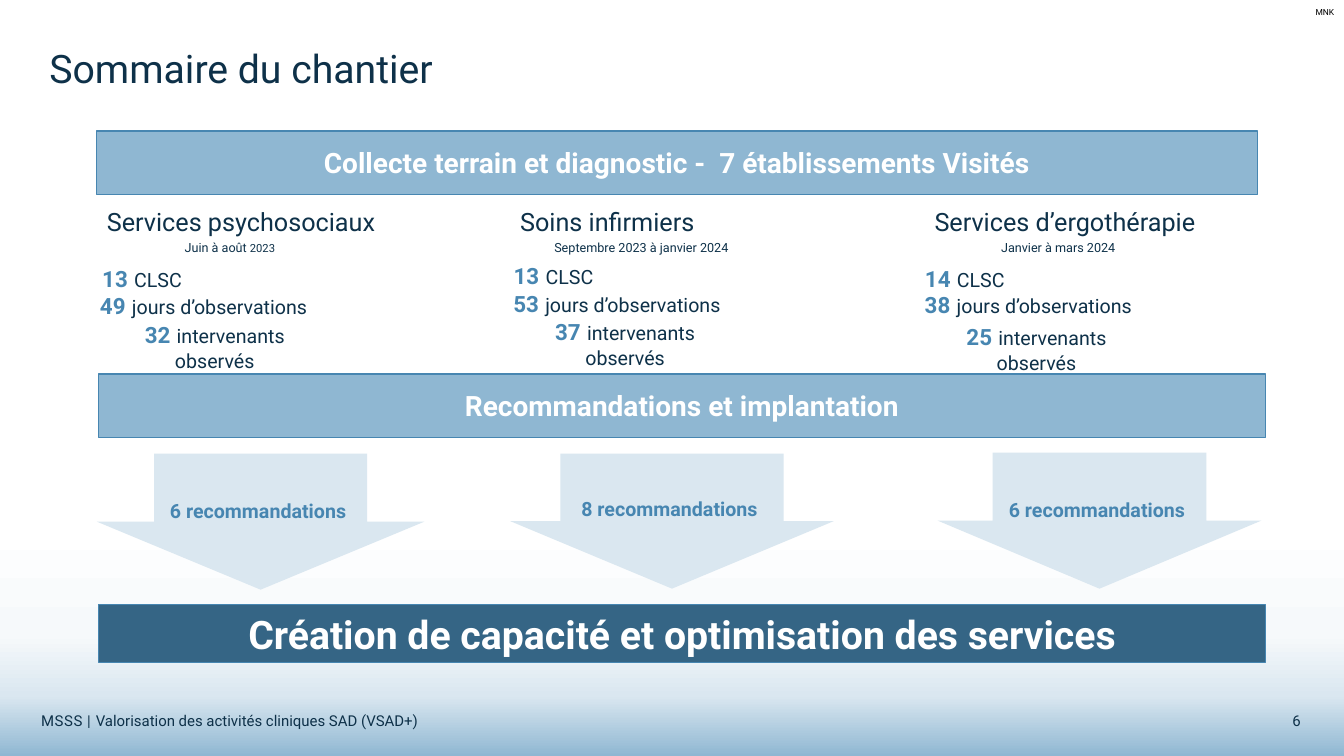
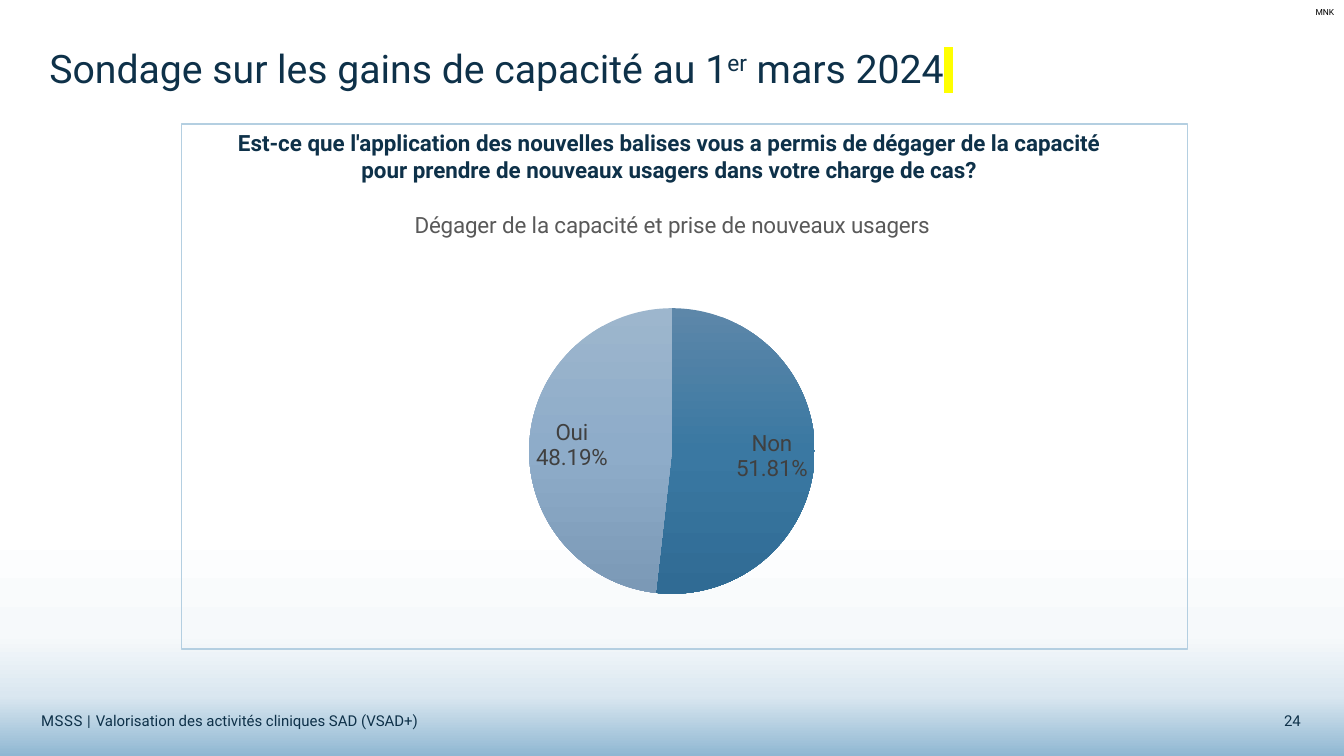
from lxml import etree
from pptx import Presentation
from pptx import util as u
from pptx.chart import data as chart_data
from pptx.dml import color
from pptx.enum import chart as chart_types, shapes, text
from pptx.oxml import ns

FONT = "Roboto"
NAVY, BLUE, DEEP, SKY, PALE = "0E3149", "4786B1", "356585", "8FB7D2", "DAE7F0"
WHITE, BLACK, GREY, FRAME, YELLOW = "FFFFFF", "000000", "404040", "B4CFE1", "FFFF00"
BACKGROUND = [(69, WHITE), (84, "F6F9FB"), (92, PALE), (100, SKY)]
LEFT, CENTER, RIGHT = text.PP_ALIGN.LEFT, text.PP_ALIGN.CENTER, text.PP_ALIGN.RIGHT
TOP, MIDDLE = text.MSO_ANCHOR.TOP, text.MSO_ANCHOR.MIDDLE

SERVICES = [
    {"heading": ("Services psychosociaux", (0.96, 1.96, 3.35, 0.47)),
     "period": ([("Juin à août ", {"size": 9}), ("2023", {"size": 8})], (1.37, 2.34, 1.82, 0.24)),
     "counts": [("13", 0.91, 2.55), ("49", 0.89, 2.82), ("32", 0.92, 3.11)],
     "arrow": ("6 recommandations ", (0.96, 4.5, 3.25, 1.35), 0.65)},
    {"heading": ("Soins infirmiers", (5.06, 1.98, 3.35, 0.44)),
     "period": ([("Septembre 2023 à janvier 2024", {"size": 9})], (5.25, 2.34, 2.22, 0.24)),
     "counts": [("13", 4.99, 2.52), ("53", 4.99, 2.8), ("37", 4.99, 3.08)],
     "arrow": ("8 recommandations ", (5.06, 4.5, 3.21, 1.34), 0.69)},
    {"heading": ("Services d’ergothérapie", (9.17, 1.98, 3.35, 0.44)),
     "period": ([("Janvier à mars 2024", {"size": 9})], (9.66, 2.34, 1.67, 0.24)),
     "counts": [("14", 9.07, 2.55), ("38", 9.07, 2.81), ("25", 9.07, 3.13)],
     "arrow": ("6 recommandations ", (9.3, 4.49, 3.21, 1.35), 0.66)},
]
COUNT_LABELS = [("CLSC", 1, 0), ("jours d’observations", 2.26, 0), ("intervenants observés", 2.42, 0.3)]
ANSWERS = [
    ("Non", 0.5181, [(0, "5D87A9"), (50, "3A78A2"), (100, "306B94")]),
    ("Oui", 0.4819, [(0, "9DB6CD"), (50, "8EACC9"), (100, "7B99B6")]),
]


def rgb(value):
    """Turn a hex string into a colour."""
    return color.RGBColor.from_string(value)


def inches(box):
    """Turn a sequence of numbers into lengths."""
    return [u.Inches(value) for value in box]


def set_all(target, values):
    """Set each named attribute on the target."""
    for name, value in values.items():
        setattr(target, name, value)


def format_font(font, size, fill=NAVY, bold=False):
    """Apply the deck typeface with a size, colour and weight."""
    set_all(font, {"name": FONT, "size": u.Pt(size), "bold": bold})
    font.color.rgb = rgb(fill)


def gradient(owner, stops):
    """Fill the owner with a vertical gradient through the stops."""
    owner.fill.gradient()
    element = owner.element.xpath(".//a:gradFill")[0]
    stop_list = element.find(ns.qn("a:gsLst"))
    for stop in list(stop_list):
        stop_list.remove(stop)
    for position, value in stops:
        stop = etree.SubElement(stop_list, ns.qn("a:gs"), pos=str(position * 1000))
        etree.SubElement(stop, ns.qn("a:srgbClr"), val=value)
    element.find(ns.qn("a:lin")).set("ang", "5400000")


def add_run(paragraph, words, style, attributes=None, highlight=None):
    """Append a formatted run, with optional raw attributes and highlight."""
    run = paragraph.add_run()
    run.text = words
    format_font(run.font, **style)
    properties = run.font._element
    for name, value in (attributes or {}).items():
        properties.set(name, value)
    if highlight:
        mark = etree.Element(ns.qn("a:highlight"))
        etree.SubElement(mark, ns.qn("a:srgbClr"), val=highlight)
        properties.find(ns.qn("a:latin")).addprevious(mark)


def write(shape, paragraphs, align=LEFT, anchor=MIDDLE, wrap=True, spacing=1.0, **margins):
    """Write paragraphs of runs into a shape."""
    frame = shape.text_frame
    set_all(frame, {"word_wrap": wrap, "auto_size": text.MSO_AUTO_SIZE.NONE, "vertical_anchor": anchor})
    set_all(frame, {name: u.Inches(value) for name, value in margins.items()})
    for index, runs in enumerate(paragraphs):
        paragraph = frame.add_paragraph() if index else frame.paragraphs[0]
        set_all(paragraph, {"alignment": align, "line_spacing": spacing, "space_before": u.Pt(0)})
        for run in runs:
            add_run(paragraph, *run)


def add_text(slide, box, paragraphs, **layout):
    """Add a text box."""
    write(slide.shapes.add_textbox(*inches(box)), paragraphs, **layout)


def fill_placeholder(shape, box, runs, **layout):
    """Move a placeholder and write one unbulleted paragraph in it."""
    set_all(shape, dict(zip(("left", "top", "width", "height"), inches(box))))
    properties = shape.text_frame.paragraphs[0]._p.get_or_add_pPr()
    set_all(properties, {"marL": 0, "indent": 0})
    etree.SubElement(properties, ns.qn("a:buNone"))
    write(shape, [runs], **layout)


def add_block(slide, kind, box, fill=None, line=None, width=1):
    """Add a flat preset shape with an optional fill and outline."""
    shape = slide.shapes.add_shape(kind, *inches(box))
    shape.shadow.inherit = False
    if fill:
        shape.fill.solid()
        shape.fill.fore_color.rgb = rgb(fill)
    else:
        shape.fill.background()
    if line:
        shape.line.color.rgb = rgb(line)
        shape.line.width = u.Pt(width)
    else:
        shape.line.fill.background()
    return shape


def add_band(slide, words, box, size=20, fill=SKY, width=1):
    """Add a full-width band with a bold white caption."""
    band = add_block(slide, shapes.MSO_SHAPE.RECTANGLE, box, fill, BLUE, width)
    write(band, [[(words, {"size": size, "fill": WHITE, "bold": True})]], align=CENTER)


def add_arrow(slide, words, box, shaft):
    """Add a down arrow with a recommendation count."""
    arrow = add_block(slide, shapes.MSO_SHAPE.DOWN_ARROW, box, PALE)
    arrow.adjustments[0], arrow.adjustments[1] = shaft, 0.5
    write(arrow, [[(words, {"size": 14, "fill": BLUE, "bold": True})]], align=CENTER, margin_top=0.27)


def add_count(slide, number, left, top, label, width, inset):
    """Add a bold figure followed by its label."""
    runs = [(number, {"size": 16, "fill": BLUE, "bold": True}),
            (" ", {"size": 18, "bold": True}), (label, {"size": 14})]
    margin = 0.1 + inset
    add_text(slide, (left, top, width, 0.4), [runs], align=CENTER, anchor=TOP,
             wrap=inset > 0, margin_left=margin, margin_right=margin)


def add_slide(presentation, layout, title, number):
    """Add a slide with the shared title, footer, number and tag."""
    slide = presentation.slides.add_slide(presentation.slide_layouts[layout])
    fill_placeholder(slide.shapes.title, (0.39, 0.36, 12.55, 0.68), title, spacing=0.9)
    small = {"size": 10.7}
    footer = [("MSSS | ", small, {"spc": "40"}), ("Valorisation des activités cliniques SAD (VSAD+)", small)]
    add_text(slide, (0.31, 7.01, 9.88, 0.28), [footer], anchor=TOP)
    add_text(slide, (12.22, 7.01, 0.78, 0.28), [[(number, small)]], align=RIGHT, anchor=TOP)
    add_text(slide, (12.95, 0.02, 0.39, 0.2), [[("MNK", {"size": 6, "fill": BLACK})]], anchor=TOP)
    return slide


def manual_layout(**values):
    """Build a chart layout element from fractions of the chart."""
    layout = etree.Element(ns.qn("c:layout"))
    manual = etree.SubElement(layout, ns.qn("c:manualLayout"))
    if "w" in values:
        etree.SubElement(manual, ns.qn("c:layoutTarget"), val="inner")
    for name in ("xMode", "yMode"):
        etree.SubElement(manual, ns.qn("c:" + name), val="edge")
    for name, value in values.items():
        etree.SubElement(manual, ns.qn("c:" + name), val=str(value))
    return layout


def place(element, layout, index):
    """Replace the layout of a chart element."""
    for old in element.findall(ns.qn("c:layout")):
        element.remove(old)
    element.insert(index, layout)


def add_pie(slide, box, title):
    """Add the pie of answers with gradient slices and outside labels."""
    data = chart_data.CategoryChartData(number_format="0.00%")
    data.categories = [name for name, _, _ in ANSWERS]
    data.add_series("Series 1", [value for _, value, _ in ANSWERS])
    chart = slide.shapes.add_chart(chart_types.XL_CHART_TYPE.PIE, *inches(box), data).chart
    chart.has_legend = False
    format_font(chart.font, 10, BLACK)
    chart.has_title = True
    add_run(chart.chart_title.text_frame.paragraphs[0], title, {"size": 16, "fill": "595959"})
    place(chart.chart_title.element, manual_layout(x=0.13, y=0.04), 1)
    place(chart.element.xpath("c:chart/c:plotArea")[0], manual_layout(x=0.29, y=0.26, w=0.42, h=0.62), 0)
    plot = chart.plots[0]
    plot.vary_by_categories = True
    series = plot.series[0]
    for index, (_, _, stops) in enumerate(ANSWERS):
        gradient(series.points[index].format, stops)
    labels = series.data_labels
    set_all(labels, {"show_value": True, "show_category_name": True, "show_percentage": False,
                     "number_format": "0.00%", "number_format_is_linked": False,
                     "position": chart_types.XL_LABEL_POSITION.BEST_FIT})
    format_font(labels.font, 16, GREY)
    for flag in chart.element.xpath(".//c:ser/c:dLbls/c:showBubbleSize"):
        separator = etree.Element(ns.qn("c:separator"))
        separator.text = "\n"
        flag.addnext(separator)


def build_summary(presentation):
    """Build the summary of the project."""
    slide = add_slide(presentation, 1, [("Sommaire du chantier", {"size": 28})], "6")
    add_band(slide, "Collecte terrain et diagnostic -  7 établissements Visités", (0.96, 1.3, 11.51, 0.63))
    add_band(slide, "Recommandations et implantation", (0.98, 3.71, 11.57, 0.63))
    add_band(slide, "Création de capacité et optimisation des services", (0.98, 6, 11.57, 0.57), 28, DEEP, 0.75)
    for index, service in enumerate(SERVICES):
        heading, box = service["heading"]
        runs = [(heading, {"size": 18})]
        if index:
            add_text(slide, box, [runs])
        else:
            fill_placeholder(slide.placeholders[1], box, runs)
        period, box = service["period"]
        add_text(slide, box, [period], align=CENTER)
        for count, label in zip(service["counts"], COUNT_LABELS):
            add_count(slide, *count, *label)
        add_arrow(slide, *service["arrow"])


def build_survey(presentation):
    """Build the survey result."""
    style = {"size": 28}
    title = [("Sondage sur les gains de capacité au 1", style), ("er", style, {"baseline": "30000"}),
             (" mars 2024", style), (" ", style, None, YELLOW)]
    slide = add_slide(presentation, 5, title, "24")
    question = ["Est-ce que l'application des nouvelles balises vous a permis de dégager de la capacité ",
                "pour prendre de nouveaux usagers dans votre charge de cas?\u00a0"]
    add_text(slide, (0.86, 1.23, 11.61, 0.64), [[(line, {"size": 16, "bold": True})] for line in question],
             align=CENTER, anchor=TOP)
    add_pie(slide, (3.16, 1.87, 7.01, 4.57), "Dégager de la capacité et prise de nouveaux usagers")
    add_block(slide, shapes.MSO_SHAPE.RECTANGLE, (1.8, 1.23, 9.98, 5.21), line=FRAME)


def main():
    """Build and save the presentation."""
    presentation = Presentation()
    set_all(presentation, {"slide_width": u.Inches(13.33), "slide_height": u.Inches(7.5)})
    gradient(presentation.slide_master.background, BACKGROUND)
    build_summary(presentation)
    build_survey(presentation)
    presentation.save("out.pptx")


if __name__ == "__main__":
    main()
